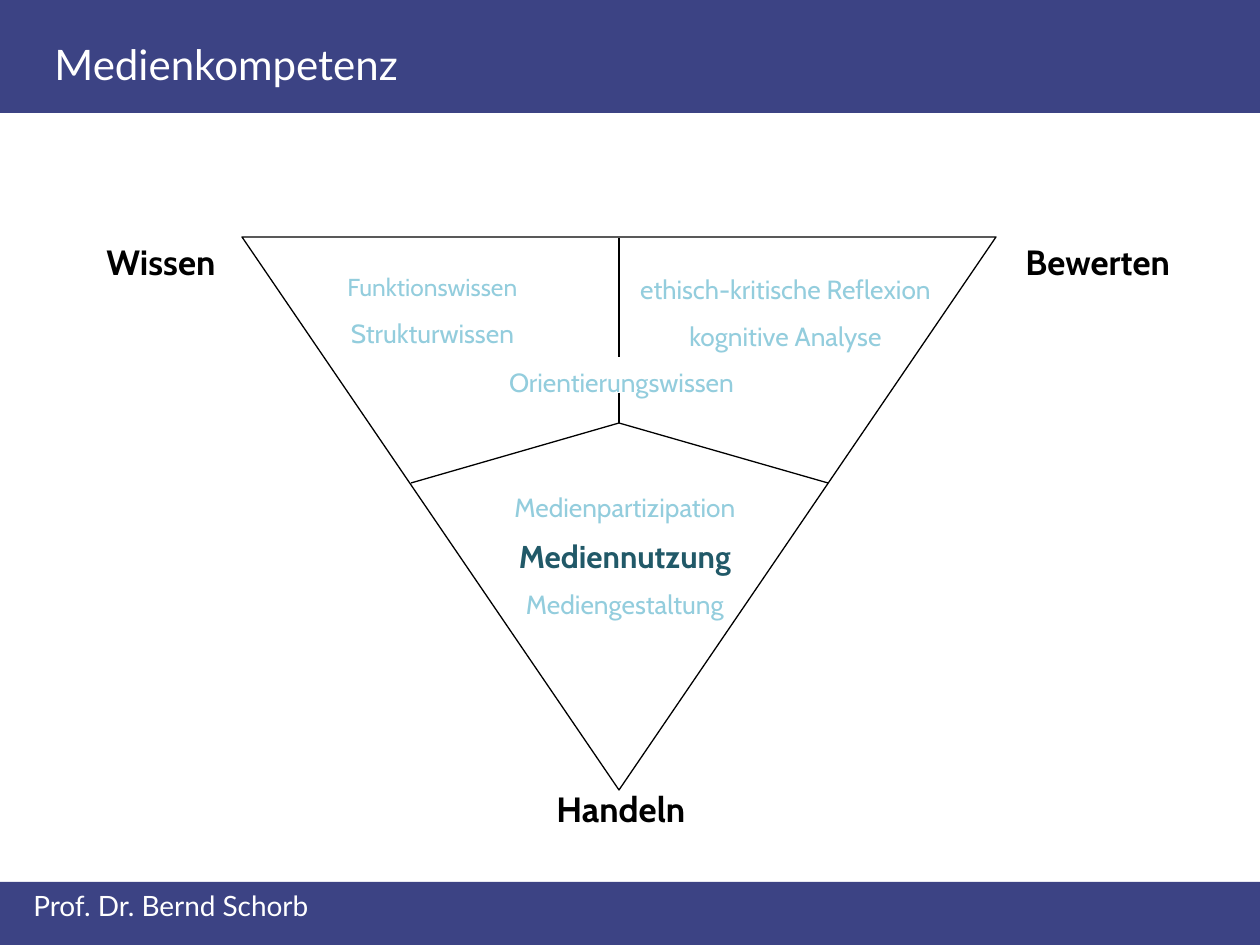
from lxml import etree
from pptx import Presentation
from pptx.dml.color import RGBColor
from pptx.enum.shapes import MSO_CONNECTOR, MSO_SHAPE
from pptx.enum.text import MSO_AUTO_SIZE, PP_ALIGN
from pptx.oxml.ns import qn
from pptx.util import Emu, Pt

RECTANGLE = MSO_SHAPE.RECTANGLE
TRIANGLE = MSO_SHAPE.ISOSCELES_TRIANGLE
STRAIGHT = MSO_CONNECTOR.STRAIGHT
FIT_TEXT = MSO_AUTO_SIZE.SHAPE_TO_FIT_TEXT
LEFT = PP_ALIGN.LEFT
CENTER = PP_ALIGN.CENTER

PX_PER_INCH = 126
WIDTH, HEIGHT = 1260, 945
NAVY, WHITE, BLACK = "3C4384", "FFFFFF", "000000"
LIGHT_BLUE, TEAL = "93CDDD", "215968"


def px(length):
    return Emu(round(length * 914400 / PX_PER_INCH))


def color(value):
    return RGBColor.from_string(value)


class SlideBuilder:
    heading_font = "Lato"
    body_font = "Cabin"
    line_width = Pt(0.75)

    def __init__(self, slide):
        self.slide = slide

    def band(self, top, height):
        band = self.slide.shapes.add_shape(
            RECTANGLE, px(0), px(top), px(WIDTH), px(height))
        band.shadow.inherit = False
        band.fill.solid()
        band.fill.fore_color.rgb = color(NAVY)
        band.line.fill.background()

    def triangle(self, left, top, width, height):
        triangle = self.slide.shapes.add_shape(
            TRIANGLE, px(left), px(top), px(width), px(height))
        triangle.shadow.inherit = False
        triangle.rotation = 180
        triangle.fill.background()
        self.outline(triangle.line)

    def divider(self, start, end):
        divider = self.slide.shapes.add_connector(
            STRAIGHT, *(px(value) for value in (*start, *end)))
        etree.SubElement(divider._element.spPr, qn("a:effectLst"))
        self.outline(divider.line)

    def outline(self, line):
        line.color.rgb = color(BLACK)
        line.width = self.line_width

    def text(self, box, lines, font=body_font, align=CENTER, spacing=None, wrap=False):
        frame = self.slide.shapes.add_textbox(*(px(value) for value in box)).text_frame
        frame.word_wrap = wrap
        frame.auto_size = FIT_TEXT
        frame.text = "\n".join(line[0] for line in lines)
        for paragraph, (_, size, fill, bold) in zip(frame.paragraphs, lines):
            paragraph.alignment = align
            if spacing:
                paragraph.line_spacing = spacing
            style = paragraph.runs[0].font
            style.name = font
            style.size = Pt(size)
            style.bold = bold
            style.color.rgb = color(fill)

    def heading(self, box, wording, size):
        self.text(box, [(wording, size, WHITE, False)],
                  font=self.heading_font, align=LEFT, wrap=True)

    def corner(self, box, wording):
        self.text(box, [(wording, 20, BLACK, True)], align=LEFT)


def main():
    presentation = Presentation()
    presentation.slide_width = px(WIDTH)
    presentation.slide_height = px(HEIGHT)
    builder = SlideBuilder(
        presentation.slides.add_slide(presentation.slide_layouts[6]))

    builder.band(0, 113)
    builder.heading((42, 32, 925, 63), "Medienkompetenz", 24)
    builder.band(882, 63)
    builder.heading((21, 882, 1218, 47), "Prof. Dr. Bernd Schorb", 16)

    builder.triangle(242, 237, 754, 553)
    axis, hub_y, side_y = 619, 423, 483
    hub = (axis, hub_y)
    for start in ((411, side_y), (828, side_y), (axis, 393)):
        builder.divider(start, hub)
    builder.divider((axis, 238), (axis, 357))

    builder.corner((94, 234, 139, 55), "Wissen")
    builder.corner((1013, 234, 185, 55), "Bewerten")
    builder.corner((544, 781, 164, 54), "Handeln")

    builder.text((494, 472, 262, 155), [
        ("Medienpartizipation", 15, LIGHT_BLUE, False),
        ("Mediennutzung", 18, TEAL, True),
        ("Mediengestaltung", 15, LIGHT_BLUE, False),
    ], spacing=1.4)
    builder.text((331, 251, 203, 105), [
        ("Funktionswissen", 14, LIGHT_BLUE, False),
        ("Strukturwissen", 15, LIGHT_BLUE, False),
    ], spacing=1.5)
    builder.text((615, 251, 341, 111), [
        ("ethisch-kritische Reflexion", 15, LIGHT_BLUE, False),
        ("kognitive Analyse", 15, LIGHT_BLUE, False),
    ], spacing=1.5)
    builder.text((490, 360, 263, 54), [
        ("Orientierungswissen", 15, LIGHT_BLUE, False),
    ])

    presentation.save("out.pptx")


if __name__ == "__main__":
    main()
